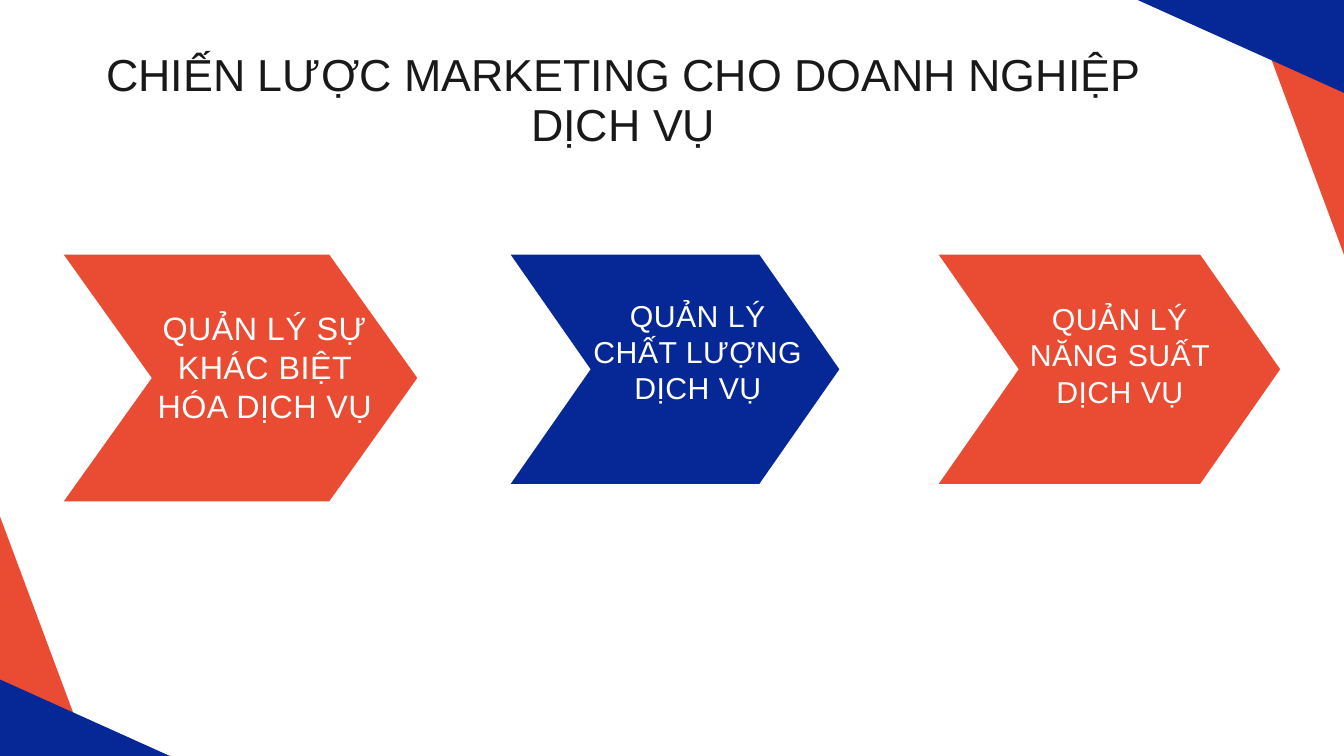
"""Build the service marketing strategy slide."""
from dataclasses import dataclass
from typing import NamedTuple

from pptx import Presentation
from pptx.dml.color import RGBColor
from pptx.enum.shapes import MSO_SHAPE
from pptx.enum.text import MSO_AUTO_SIZE, PP_ALIGN
from pptx.shapes.autoshape import Shape
from pptx.slide import Slide
from pptx.util import Inches, Pt

COLS, ROWS = 20, 11.25
UNIT = Inches(1)


@dataclass(frozen=True)
class Theme:
    """Colours, font and type sizes of the slide."""
    red: str = "EA4B33"
    blue: str = "052896"
    ink: str = "191919"
    white: str = "FFFFFF"
    font: str = "Arial"
    title: float = 48
    large: float = 34.6
    small: float = 32.4
    track: float = 0.5


class Box(NamedTuple):
    """A place on the grid, in columns and rows."""
    left: float
    top: float
    width: float
    height: float

    def scale(self) -> list[int]:
        """Turn grid units into slide lengths."""
        return [round(n * UNIT) for n in self]


class Corner(NamedTuple):
    """A right triangle that trims a slide corner."""
    box: Box
    color: str
    turn: int


class Step(NamedTuple):
    """A chevron and its label."""
    box: Box
    notch: float
    color: str
    label: Box
    text: str
    size: float
    lead: float


THEME = Theme()
TITLE = "CHIẾN LƯỢC MARKETING CHO DOANH NGHIỆP DỊCH VỤ"
CORNERS = [
    Corner(Box(18.62, 0.08, 1.42, 3.82), THEME.red, 180),
    Corner(Box(16.93, 0, 3.11, 1.4), THEME.blue, 180),
    Corner(Box(-0.14, 7.31, 1.54, 4.13), THEME.red, 0),
    Corner(Box(-0.16, 10.04, 3.11, 1.4), THEME.blue, 0),
]
STEP_TOP = 3.79
STEPS = [
    Step(Box(0.95, STEP_TOP, 5.26, 3.67), 1.31, THEME.red,
         Box(2.19, 4.59, 3.5, 1.72),
         "QUẢN LÝ SỰ KHÁC BIỆT HÓA DỊCH VỤ", THEME.large, 41.5),
    Step(Box(7.6, STEP_TOP, 4.89, 3.41), 1.19, THEME.blue,
         Box(8.81, 4.42, 3.15, 1.61),
         "QUẢN LÝ CHẤT LƯỢNG DỊCH VỤ", THEME.small, 38.9),
    Step(Box(13.97, STEP_TOP, 5.08, 3.41), 1.19, THEME.red,
         Box(15.09, 4.47, 3.15, 1.61),
         "QUẢN LÝ NĂNG SUẤT DỊCH VỤ", THEME.small, 38.9),
]


def add_form(slide: Slide, kind: MSO_SHAPE, box: Box, color: str) -> Shape:
    """Add a flat preset shape."""
    form = slide.shapes.add_shape(kind, *box.scale())
    form.shadow.inherit = False
    form.fill.solid()
    form.fill.fore_color.rgb = RGBColor.from_string(color)
    form.line.fill.background()
    return form


def add_text(slide: Slide, box: Box, text: str, size: float, lead: float,
             color: str, track: float = 0) -> None:
    """Add centred text with exact line spacing and tracking in points."""
    frame = slide.shapes.add_textbox(*box.scale()).text_frame
    frame.word_wrap = True
    frame.auto_size = MSO_AUTO_SIZE.SHAPE_TO_FIT_TEXT
    frame.margin_left = frame.margin_right = 0
    frame.margin_top = frame.margin_bottom = 0
    frame.text = text
    para = frame.paragraphs[0]
    para.alignment = PP_ALIGN.CENTER
    para.line_spacing = Pt(lead)
    run = para.runs[0]
    run.font.name = THEME.font
    run.font.size = Pt(size)
    run.font.color.rgb = RGBColor.from_string(color)
    if track:
        run._r.get_or_add_rPr().set("spc", str(round(track * 100)))


def add_corner(slide: Slide, corner: Corner) -> None:
    """Draw one corner triangle."""
    form = add_form(slide, MSO_SHAPE.RIGHT_TRIANGLE, corner.box, corner.color)
    form.rotation = corner.turn


def add_step(slide: Slide, step: Step) -> None:
    """Draw one chevron with its label."""
    form = add_form(slide, MSO_SHAPE.CHEVRON, step.box, step.color)
    form.adjustments[0] = step.notch / step.box.height
    add_text(slide, step.label, step.text, step.size, step.lead,
             THEME.white, THEME.track)


def main() -> None:
    """Build and save the slide."""
    deck = Presentation()
    deck.slide_width = round(COLS * UNIT)
    deck.slide_height = round(ROWS * UNIT)
    slide = deck.slides.add_slide(deck.slide_layouts[6])
    for corner in CORNERS:
        add_corner(slide, corner)
    add_text(slide, Box(1.12, 0.74, 16.31, 1.49), TITLE, THEME.title, 54,
             THEME.ink)
    for step in STEPS:
        add_step(slide, step)
    deck.save("out.pptx")


if __name__ == "__main__":
    main()
